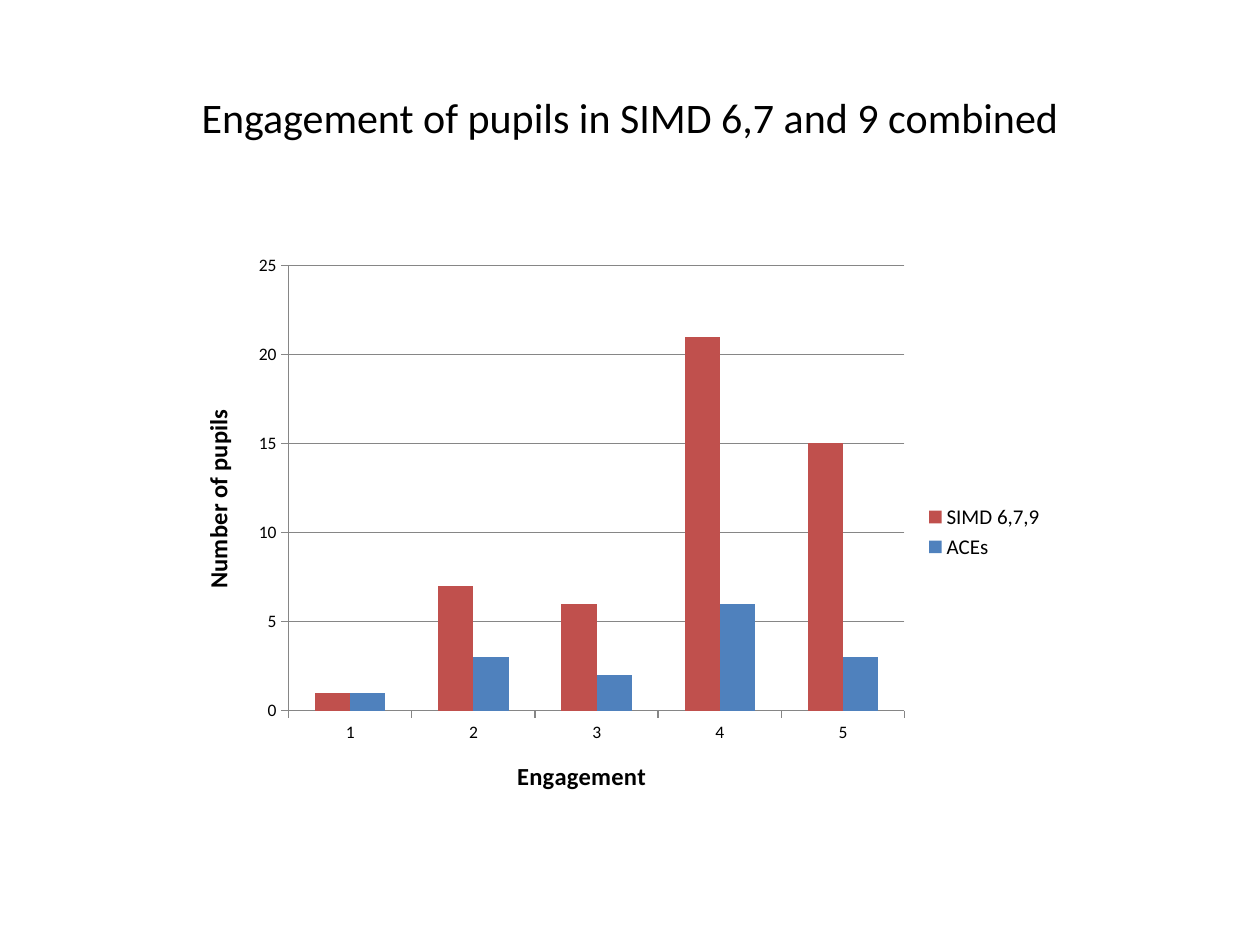
import pptx
import pptx.chart.data
import pptx.dml.color
import pptx.enum.chart
import pptx.enum.text
import pptx.util

FONT = "Calibri"
BLACK = "000000"
GREY = "868686"
CATEGORIES = ["1", "2", "3", "4", "5"]
SERIES = [
    ("SIMD 6,7,9", [1, 7, 6, 21, 15], "C0504D"),
    ("ACEs", [1, 3, 2, 6, 3], "4F81BD"),
]


def px(n):
    return pptx.util.Emu(round(n * 914400 / 126))


def rgb(value):
    return pptx.dml.color.RGBColor.from_string(value)


def style_font(font, size, bold=False, color=BLACK):
    font.name = FONT
    font.size = pptx.util.Pt(size)
    font.bold = bold
    font.color.rgb = rgb(color)


def write_text(tf, text, size, bold=False, align=pptx.enum.text.PP_ALIGN.CENTER):
    p = tf.paragraphs[0]
    p.alignment = align
    r = p.add_run()
    r.text = text
    style_font(r.font, size, bold)


def style_line(line, color=GREY):
    line.color.rgb = rgb(color)
    line.width = pptx.util.Pt(0.75)


def add_title(s, box, text):
    sp = s.shapes.title
    sp.left, sp.top, sp.width, sp.height = map(px, box)
    tf = sp.text_frame
    tf.word_wrap = True
    tf.vertical_anchor = pptx.enum.text.MSO_ANCHOR.MIDDLE
    write_text(tf, text, 24)


def style_axis(axis, title, gridlines):
    write_text(axis.axis_title.text_frame, title, 14, bold=True)
    axis.major_tick_mark = pptx.enum.chart.XL_TICK_MARK.OUTSIDE
    axis.minor_tick_mark = pptx.enum.chart.XL_TICK_MARK.NONE
    axis.has_major_gridlines = gridlines
    style_font(axis.tick_labels.font, 10)
    style_line(axis.format.line)
    if gridlines:
        style_line(axis.major_gridlines.format.line)


def add_engagement_chart(s, box):
    data = pptx.chart.data.CategoryChartData(number_format="0")
    data.categories = CATEGORIES
    for name, values, _ in SERIES:
        data.add_series(name, values)
    kind = pptx.enum.chart.XL_CHART_TYPE.COLUMN_CLUSTERED
    chart = s.shapes.add_chart(kind, *map(px, box), data).chart
    style_font(chart.font, 10)
    chart.has_title = False

    plot = chart.plots[0]
    plot.gap_width = 150
    plot.overlap = 0
    plot.vary_by_categories = False
    for series, (_, _, color) in zip(plot.series, SERIES):
        series.format.fill.solid()
        series.format.fill.fore_color.rgb = rgb(color)

    style_axis(chart.category_axis, "Engagement", False)
    style_axis(chart.value_axis, "Number of pupils", True)
    chart.value_axis.minimum_scale = 0
    chart.value_axis.maximum_scale = 25
    chart.value_axis.major_unit = 5

    chart.has_legend = True
    chart.legend.position = pptx.enum.chart.XL_LEGEND_POSITION.RIGHT
    chart.legend.include_in_layout = False
    style_font(chart.legend.font, 12)


def main():
    prs = pptx.Presentation()
    prs.slide_width = px(1260)
    prs.slide_height = px(945)
    s = prs.slides.add_slide(prs.slide_layouts[5])
    add_title(s, (63, 38, 1134, 158), "Engagement of pupils in SIMD 6,7 and 9 combined")
    add_engagement_chart(s, (174, 244, 883, 576))
    prs.save("out.pptx")


if __name__ == "__main__":
    main()
